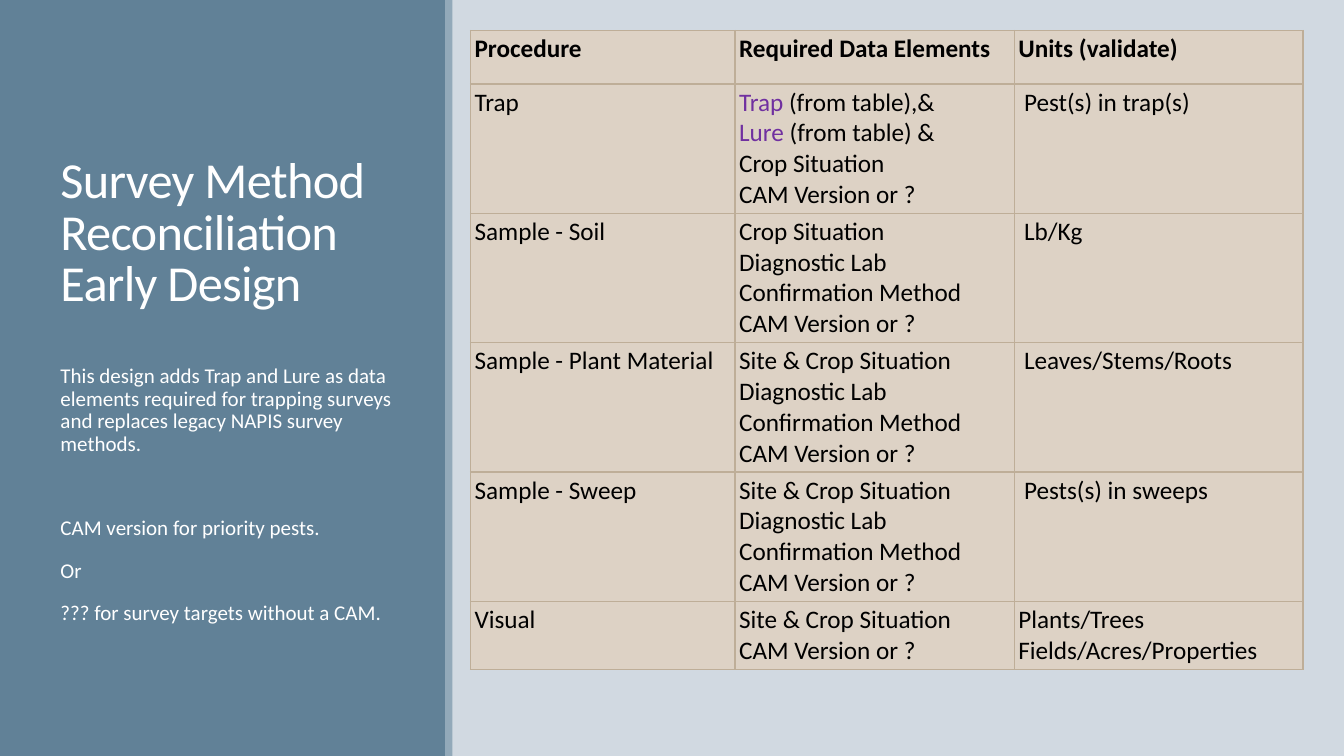
from lxml import etree
from pptx import Presentation
from pptx.dml.color import RGBColor
from pptx.enum.shapes import MSO_SHAPE
from pptx.enum.text import MSO_ANCHOR, MSO_AUTO_SIZE, PP_ALIGN
from pptx.oxml.ns import qn
from pptx.util import Emu, Pt

RECT = MSO_SHAPE.RECTANGLE
TOP, BOTTOM = MSO_ANCHOR.TOP, MSO_ANCHOR.BOTTOM
LEFT = PP_ALIGN.LEFT
NO_FIT = MSO_AUTO_SIZE.NONE

SCALE = 9525  # EMU in one px, 96 px to the inch
FONT = "Calibri"
WHITE, BLACK, PURPLE = "FFFFFF", "000000", "7030A0"
BACK, PANEL, STRIPE = "D1D9E1", "618197", "92A9B9"
SAND, RULE = "DDD2C5", "BEAE98"

TITLE = "Survey Method Reconciliation\vEarly Design"
NOTES = [
    "This design adds Trap and Lure as data elements required for "
    "trapping surveys and replaces legacy NAPIS survey methods.",
    "CAM version for priority pests.",
    "Or",
    "??? for survey targets without a CAM.",
]
CAM = "CAM Version or ?"
LAB = f"Diagnostic Lab\nConfirmation Method\n{CAM}"
SITE = "Site & Crop Situation"
# A bar ends the purple part of a line.
ROWS = [
    ("Procedure", "Required Data Elements", "Units (validate)"),
    ("Trap",
     f"Trap| (from table),&\nLure| (from table) &\nCrop Situation\n{CAM}",
     " Pest(s) in trap(s)"),
    ("Sample - Soil", f"Crop Situation\n{LAB}", " Lb/Kg"),
    ("Sample - Plant Material", f"{SITE}\n{LAB}", " Leaves/Stems/Roots"),
    ("Sample - Sweep", f"{SITE}\n{LAB}", " Pests(s) in sweeps"),
    ("Visual", f"{SITE}\n{CAM}", "Plants/Trees\nFields/Acres/Properties"),
]
WIDTHS = [252, 266, 275]
HEIGHTS = [51, 123, 123, 123, 123, 64]


def px(num):
    return Emu(num * SCALE)


def rgb(code):
    return RGBColor.from_string(code)


def style(font, size, color, bold=False):
    font.name, font.size, font.bold = FONT, Pt(size), bold
    font.color.rgb = rgb(color)


def place(shape, left, top, width, height):
    shape.left, shape.top = px(left), px(top)
    shape.width, shape.height = px(width), px(height)


def add_panel(slide, left, width, color):
    """Add a full-height band behind the title."""
    band = slide.shapes.add_shape(RECT, px(left), 0, px(width), px(720))
    band.shadow.inherit = False
    band.fill.solid()
    band.fill.fore_color.rgb = rgb(color)
    band.line.fill.background()
    slide.shapes.title.element.addprevious(band.element)


def fill_frame(shape, anchor, lines, size, gap):
    frame = shape.text_frame
    frame.text = lines
    frame.word_wrap = True
    frame.auto_size = NO_FIT
    frame.vertical_anchor = anchor
    for par in frame.paragraphs:
        par.alignment = LEFT
        par.line_spacing = gap
        for run in par.runs:
            style(run.font, size, WHITE)
    return frame


def add_title(slide):
    title = slide.shapes.title
    place(title, 48, 62, 336, 240)
    fill_frame(title, BOTTOM, TITLE, 36, 0.85)
    for props in title.element.iter(qn("a:rPr")):
        props.set("spc", "-50")


def add_notes(slide):
    body = slide.placeholders[1]
    place(body, 48, 343, 336, 320)
    frame = fill_frame(body, TOP, "\n".join(NOTES), 15, 0.9)
    for par, before in zip(frame.paragraphs, [0, 42, 12, 12]):
        par.space_before, par.space_after = Pt(before), Pt(2)
    for props in body.element.iter(qn("a:pPr")):
        props.set("marL", "0")
        props.set("indent", "0")
        etree.SubElement(props, qn("a:buNone"))


def add_edges(cell):
    props = cell._tc.get_or_add_tcPr()
    for side in ("lnL", "lnR", "lnT", "lnB"):
        line = etree.SubElement(props, qn(f"a:{side}"), w=str(Pt(1)))
        fill = etree.SubElement(line, qn("a:solidFill"))
        etree.SubElement(fill, qn("a:srgbClr"), val=RULE)


def fill_cell(cell, text, bold):
    add_edges(cell)
    cell.fill.solid()
    cell.fill.fore_color.rgb = rgb(SAND)
    cell.margin_left = cell.margin_right = px(4)
    cell.margin_top = cell.margin_bottom = px(3)
    cell.vertical_anchor = TOP
    cell.text_frame.text = text
    for par in cell.text_frame.paragraphs:
        head, bar, rest = par.text.partition("|")
        if bar:
            par.text = head
            par.add_run().text = rest
        for run in par.runs:
            style(run.font, 18, BLACK, bold)
        if bar:
            par.runs[0].font.color.rgb = rgb(PURPLE)


def add_grid(slide):
    frame = slide.shapes.add_table(
        len(ROWS), len(WIDTHS), px(448), px(29),
        px(sum(WIDTHS)), px(sum(HEIGHTS)))
    table = frame.table
    for col, width in zip(table.columns, WIDTHS):
        col.width = px(width)
    for row, height in zip(table.rows, HEIGHTS):
        row.height = px(height)
    for r, texts in enumerate(ROWS):
        for c, text in enumerate(texts):
            fill_cell(table.cell(r, c), text, r == 0)


def main():
    deck = Presentation()
    deck.slide_width, deck.slide_height = px(1280), px(720)
    slide = deck.slides.add_slide(deck.slide_layouts[1])
    slide.background.fill.solid()
    slide.background.fill.fore_color.rgb = rgb(BACK)
    add_panel(slide, 0, 425, PANEL)
    add_panel(slide, 424, 7, STRIPE)
    add_title(slide)
    add_grid(slide)
    add_notes(slide)
    deck.save("out.pptx")


if __name__ == "__main__":
    main()
